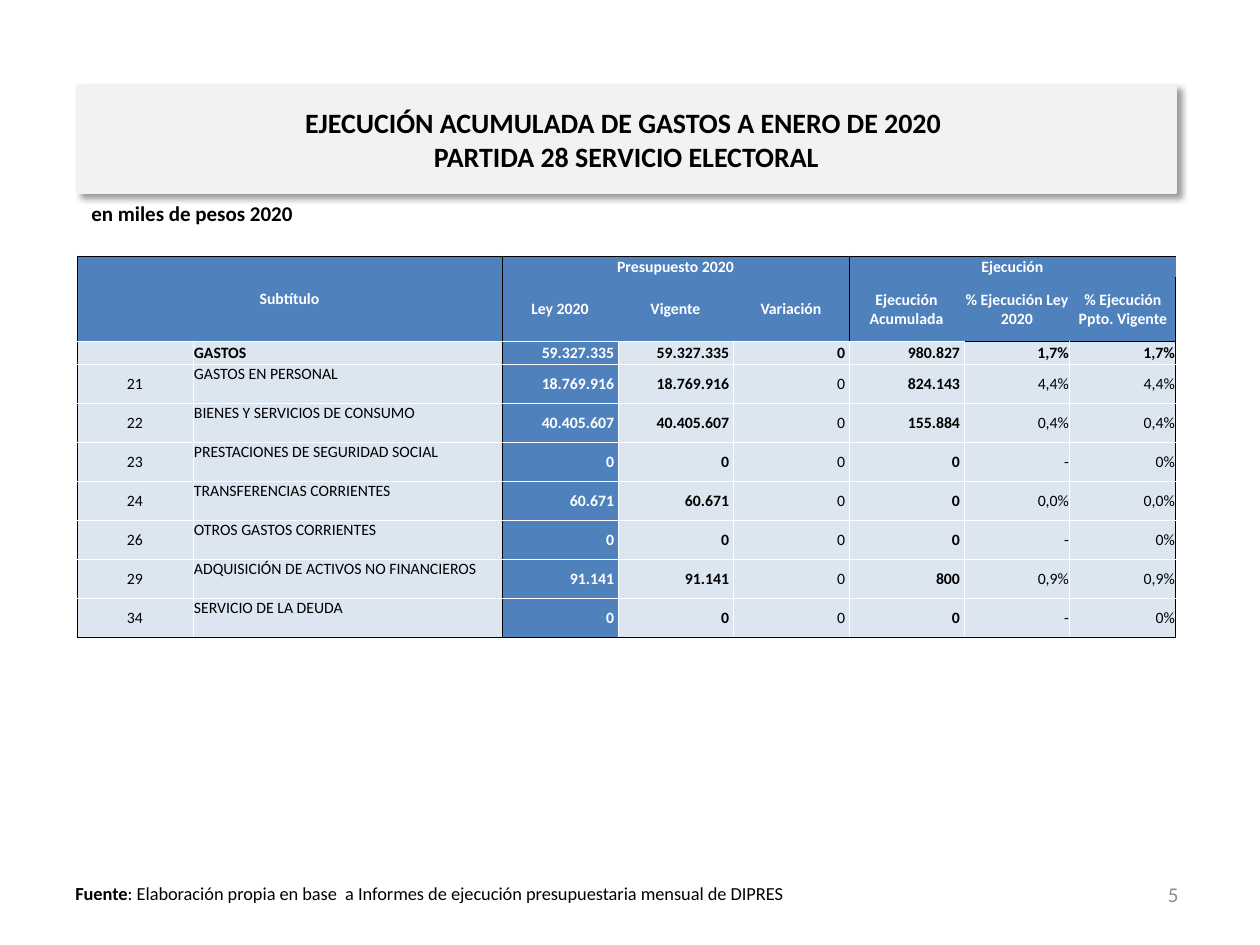
import pptx
import pptx.dml.color
import pptx.enum.shapes
import pptx.enum.text
import pptx.oxml
import pptx.oxml.ns
import pptx.util

RGBColor = pptx.dml.color.RGBColor
ALIGN = pptx.enum.text.PP_ALIGN
ANCHOR = pptx.enum.text.MSO_ANCHOR

BLACK = RGBColor(0x00, 0x00, 0x00)
WHITE = RGBColor(0xFF, 0xFF, 0xFF)
GREY = RGBColor(0x8C, 0x8C, 0x8C)
TITLE_FILL = RGBColor(0xF2, 0xF2, 0xF2)
BLUE = RGBColor(0x4F, 0x81, 0xBD)
PALE_BLUE = RGBColor(0xDC, 0xE6, 0xF1)

PX_PER_INCH = 126
NAMESPACE = pptx.oxml.ns.nsdecls("a")

# Table content and geometry
COLUMN_WIDTHS = [116, 309, 116, 115, 116, 115, 106, 106]
HEADER_ROWS = 2
ROW_HEIGHTS = [21, 64, 23] + [39] * 7
COLUMN_HEADS = ["Ley 2020", "Vigente", "Variación", "Ejecución Acumulada",
                "% Ejecución Ley 2020", "% Ejecución Ppto. Vigente"]
EXPENSES = [
    ("", "GASTOS", "59.327.335", "59.327.335", "0", "980.827", "1,7%", "1,7%"),
    ("21", "GASTOS EN PERSONAL", "18.769.916", "18.769.916", "0", "824.143", "4,4%", "4,4%"),
    ("22", "BIENES Y SERVICIOS DE CONSUMO", "40.405.607", "40.405.607", "0", "155.884", "0,4%", "0,4%"),
    ("23", "PRESTACIONES DE SEGURIDAD SOCIAL", "0", "0", "0", "0", "-", "0%"),
    ("24", "TRANSFERENCIAS CORRIENTES", "60.671", "60.671", "0", "0", "0,0%", "0,0%"),
    ("26", "OTROS GASTOS CORRIENTES", "0", "0", "0", "0", "-", "0%"),
    ("29", "ADQUISICIÓN DE ACTIVOS NO FINANCIEROS", "91.141", "91.141", "0", "800", "0,9%", "0,9%"),
    ("34", "SERVICIO DE LA DEUDA", "0", "0", "0", "0", "-", "0%"),
]
CODE, NAME, LAW, CURRENT, VARIATION, SPENT, SPENT_OF_LAW, SPENT_OF_CURRENT = range(8)


def px(length):
    return pptx.util.Emu(round(length * 914400 / PX_PER_INCH))


def vertical_line(row, edge):
    """Colour of the line at a column edge, or None."""
    header = row < HEADER_ROWS
    if edge in (CODE, LAW, len(COLUMN_WIDTHS)) or (header and edge == SPENT):
        return BLACK
    return None if header else WHITE


def horizontal_line(edge, column):
    """Colour of the line at a row edge, or None."""
    if edge in (0, len(ROW_HEIGHTS)):
        return BLACK
    if edge < HEADER_ROWS:
        return None
    return BLACK if edge == HEADER_ROWS and column >= SPENT_OF_LAW else WHITE


class Deck:
    font_name = "Calibri"

    def __init__(self, slide):
        self.slide = slide

    def style(self, paragraph, size, color=BLACK, bold=False, align=ALIGN.LEFT):
        paragraph.alignment = align
        font = paragraph.font
        font.name, font.size, font.bold = self.font_name, pptx.util.Pt(size), bold
        font.color.rgb = color

    def text(self, box, runs, size, anchor=ANCHOR.TOP, **look):
        frame = self.slide.shapes.add_textbox(*map(px, box)).text_frame
        frame.word_wrap = True
        frame.vertical_anchor = anchor
        paragraph = frame.paragraphs[0]
        self.style(paragraph, size, **look)
        for words, bold in runs:
            run = paragraph.add_run()
            run.text = words
            run.font.bold = bold

    def title(self, box, words):
        banner = self.slide.shapes.add_shape(
            pptx.enum.shapes.MSO_SHAPE.RECTANGLE, *map(px, box))
        banner.fill.solid()
        banner.fill.fore_color.rgb = TITLE_FILL
        banner.line.color.rgb = TITLE_FILL
        banner.line.width = pptx.util.Pt(0.75)
        banner.shadow.inherit = False
        effects = banner.element.spPr.find(pptx.oxml.ns.qn("a:effectLst"))
        effects.append(pptx.oxml.parse_xml(
            f'<a:outerShdw {NAMESPACE} blurRad="50800" dist="38100" dir="2700000" '
            'algn="tl" rotWithShape="0"><a:srgbClr val="000000">'
            '<a:alpha val="40000"/></a:srgbClr></a:outerShdw>'))
        frame = banner.text_frame
        frame.word_wrap = True
        frame.vertical_anchor = ANCHOR.MIDDLE
        frame.text = words
        self.style(frame.paragraphs[0], 16, bold=True, align=ALIGN.CENTER)

    def table(self, left, top):
        box = left, top, sum(COLUMN_WIDTHS), sum(ROW_HEIGHTS)
        table = self.slide.shapes.add_table(
            len(ROW_HEIGHTS), len(COLUMN_WIDTHS), *map(px, box)).table
        table.first_row = table.horz_banding = False
        for column, width in zip(table.columns, COLUMN_WIDTHS):
            column.width = px(width)
        for row, height in zip(table.rows, ROW_HEIGHTS):
            row.height = px(height)
        return table

    def borders(self, cell, row, column):
        sides = {"L": vertical_line(row, column), "R": vertical_line(row, column + 1),
                 "T": horizontal_line(row, column), "B": horizontal_line(row + 1, column)}
        for side, color in sides.items():
            paint = (f'<a:solidFill><a:srgbClr val="{color}"/></a:solidFill>'
                     if color is not None else "<a:noFill/>")
            cell._tc.get_or_add_tcPr().append(pptx.oxml.parse_xml(
                f'<a:ln{side} {NAMESPACE} w="6350">{paint}</a:ln{side}>'))

    def cell(self, table, row, column, words, fill, anchor=ANCHOR.MIDDLE,
             right_margin=1, **look):
        cell = table.cell(row, column)
        self.borders(cell, row, column)
        cell.fill.solid()
        cell.fill.fore_color.rgb = fill
        cell.margin_left = cell.margin_top = px(1)
        cell.margin_right, cell.margin_bottom = px(right_margin), 0
        cell.vertical_anchor = anchor
        cell.text = words
        paragraph = cell.text_frame.paragraphs[0]
        self.style(paragraph, 9, **look)
        if not words:
            # Keeps an empty cell from stretching its row
            paragraph._p.append(pptx.oxml.parse_xml(f'<a:endParaRPr {NAMESPACE} sz="900"/>'))


def add_header(deck, table):
    groups = ["Subtítulo", "", "Presupuesto 2020", "", "", "Ejecución", "", ""]
    for row, heads in enumerate([groups, ["", ""] + COLUMN_HEADS]):
        for column, words in enumerate(heads):
            grouped = row == 0 and column >= LAW
            deck.cell(table, row, column, words, BLUE, color=WHITE, bold=True,
                      anchor=ANCHOR.BOTTOM if grouped else ANCHOR.MIDDLE,
                      align=ALIGN.CENTER)
    table.cell(0, CODE).merge(table.cell(1, NAME))
    table.cell(0, LAW).merge(table.cell(0, VARIATION))
    table.cell(0, SPENT).merge(table.cell(0, SPENT_OF_CURRENT))


def add_expenses(deck, table):
    alignments = {CODE: ALIGN.CENTER, NAME: ALIGN.JUSTIFY}
    for row, expense in enumerate(EXPENSES, HEADER_ROWS):
        total = row == HEADER_ROWS
        for column, words in enumerate(expense):
            law = column == LAW
            deck.cell(table, row, column, words, BLUE if law else PALE_BLUE,
                      color=WHITE if law else BLACK,
                      bold=total or column in (LAW, CURRENT, SPENT),
                      anchor=ANCHOR.TOP if column == NAME and not total else ANCHOR.MIDDLE,
                      right_margin=4 if LAW <= column <= SPENT else 1,
                      align=alignments.get(column, ALIGN.RIGHT))


def main():
    presentation = pptx.Presentation()
    presentation.slide_width = px(10 * PX_PER_INCH)
    presentation.slide_height = px(945)
    deck = Deck(presentation.slides.add_slide(presentation.slide_layouts[6]))

    # Source note, title, page number and units
    deck.text((63, 876, 745, 35), [
        ("Fuente", True),
        (": Elaboración propia en base  a Informes de ejecución presupuestaria mensual de DIPRES", False),
    ], 10.5)
    deck.title((77, 86, 1099, 107),
               "EJECUCIÓN ACUMULADA DE GASTOS A ENERO DE 2020 \vPARTIDA 28 SERVICIO ELECTORAL")
    deck.text((897, 869, 294, 50), [("5", False)], 12, anchor=ANCHOR.MIDDLE,
              color=GREY, align=ALIGN.RIGHT)
    deck.text((79, 194, 1086, 63), [("en miles de pesos 2020", True)], 12)

    # Budget table
    budget = deck.table(77, 256)
    add_header(deck, budget)
    add_expenses(deck, budget)

    presentation.save("out.pptx")


if __name__ == "__main__":
    main()
